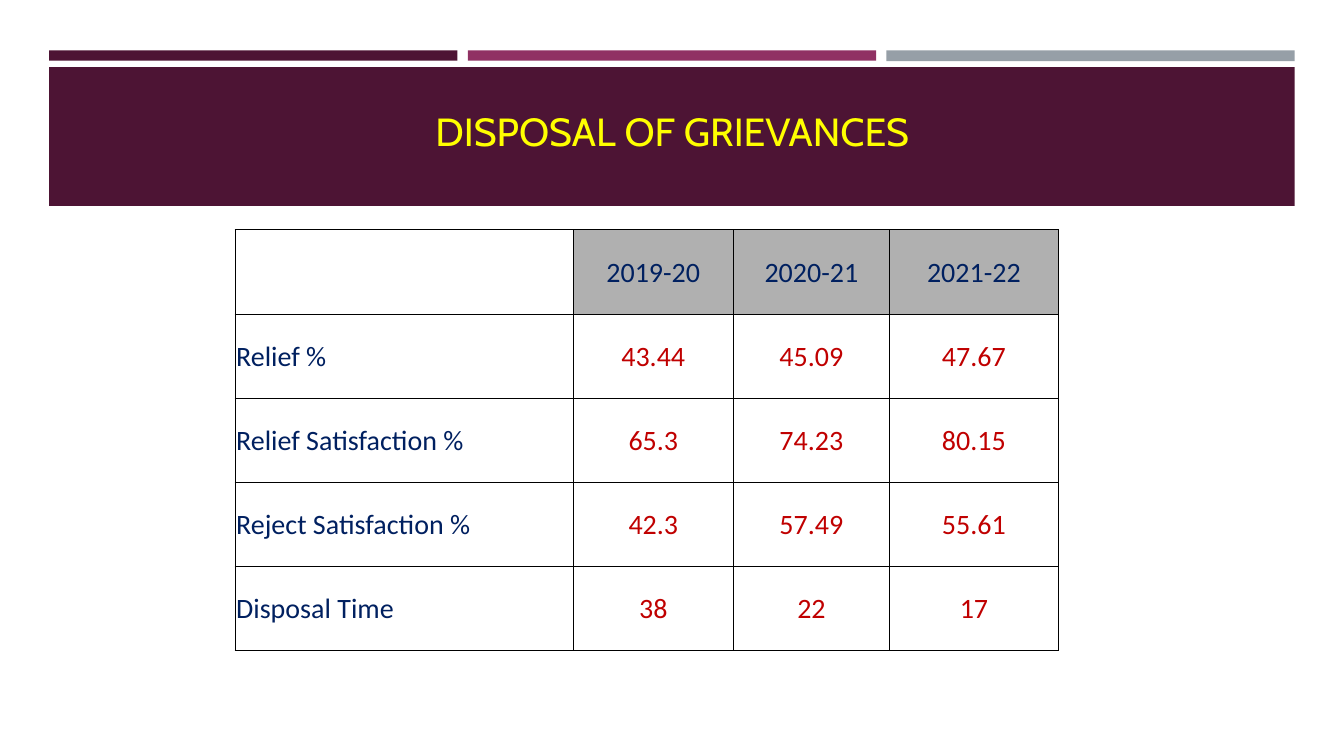
import dataclasses

import lxml.etree
import pptx
import pptx.dml.color
import pptx.enum.shapes
import pptx.enum.text
import pptx.oxml.ns
import pptx.util


@dataclasses.dataclass(frozen=True)
class Theme:
    plum: str = "4D1434"
    magenta: str = "903163"
    slate: str = "969FA7"
    yellow: str = "FFFF00"
    navy: str = "002060"
    red: str = "C00000"
    header: str = "B0B0B0"
    border: str = "000000"
    title_font: str = "Cabin"
    table_font: str = "Calibri"
    title_size: int = 28
    table_size: int = 20
    border_width: float = 0.5


theme = Theme()
Cm = pptx.util.Cm
PP_ALIGN = pptx.enum.text.PP_ALIGN
MSO_ANCHOR = pptx.enum.text.MSO_ANCHOR


def add_text(paragraph, text, font_name, size, color, alignment):
    paragraph.alignment = alignment
    run = paragraph.add_run()
    run.text = text
    run.font.name = font_name
    run.font.size = pptx.util.Pt(size)
    run.font.color.rgb = pptx.dml.color.RGBColor.from_string(color)


def add_borders(cell):
    properties = cell._tc.get_or_add_tcPr()
    for position, side in enumerate(("lnL", "lnR", "lnT", "lnB")):
        line = lxml.etree.Element(pptx.oxml.ns.qn(f"a:{side}"))
        line.set("w", str(pptx.util.Pt(theme.border_width)))
        fill = lxml.etree.SubElement(line, pptx.oxml.ns.qn("a:solidFill"))
        color = lxml.etree.SubElement(fill, pptx.oxml.ns.qn("a:srgbClr"))
        color.set("val", theme.border)
        properties.insert(position, line)


presentation = pptx.Presentation()
presentation.slide_width = Cm(33.87)
presentation.slide_height = Cm(19.05)
slide = presentation.slides.add_slide(presentation.slide_layouts[5])

bands = [
    (1.24, 1.27, 10.29, 0.26, theme.plum),
    (11.79, 1.27, 10.29, 0.26, theme.magenta),
    (22.34, 1.27, 10.29, 0.27, theme.slate),
    (1.24, 1.69, 31.39, 3.5, theme.plum),
]
for left, top, width, height, color in bands:
    band = slide.shapes.add_shape(
        pptx.enum.shapes.MSO_SHAPE.RECTANGLE, Cm(left), Cm(top), Cm(width), Cm(height)
    )
    band.shadow.inherit = False
    band.fill.solid()
    band.fill.fore_color.rgb = pptx.dml.color.RGBColor.from_string(color)
    band.line.fill.background()

title = slide.shapes.title
band.element.addnext(title.element)
title.left, title.top, title.width, title.height = Cm(1.63), Cm(2.51), Cm(30.62), Cm(1.5)
title.text_frame.vertical_anchor = MSO_ANCHOR.BOTTOM
title.text_frame.word_wrap = True
add_text(title.text_frame.paragraphs[0], "DISPOSAL OF GRIEVANCES",
         theme.title_font, theme.title_size, theme.yellow, PP_ALIGN.CENTER)

grievances = [
    ("", "2019-20", "2020-21", "2021-22"),
    ("Relief %", "43.44", "45.09", "47.67"),
    ("Relief Satisfaction %", "65.3", "74.23", "80.15"),
    ("Reject Satisfaction %", "42.3", "57.49", "55.61"),
    ("Disposal Time", "38", "22", "17"),
]
column_widths = [8.53, 4.03, 3.94, 4.25]
row_height = 2.12

table = slide.shapes.add_table(
    len(grievances), len(column_widths), Cm(5.92), Cm(5.79),
    Cm(sum(column_widths)), Cm(row_height * len(grievances))
).table
table.first_row = False
table.horz_banding = False
for column, width in zip(table.columns, column_widths):
    column.width = Cm(width)

for row_index, values in enumerate(grievances):
    table.rows[row_index].height = Cm(row_height)
    for column_index, value in enumerate(values):
        cell = table.cell(row_index, column_index)
        cell.vertical_anchor = MSO_ANCHOR.MIDDLE
        cell.margin_left = cell.margin_right = cell.margin_top = Cm(0.03)
        cell.margin_bottom = 0
        is_heading = row_index == 0 or column_index == 0
        if row_index == 0 and value:
            cell.fill.solid()
            cell.fill.fore_color.rgb = pptx.dml.color.RGBColor.from_string(theme.header)
        else:
            cell.fill.background()
        add_borders(cell)
        if value:
            add_text(cell.text_frame.paragraphs[0], value, theme.table_font, theme.table_size,
                     theme.navy if is_heading else theme.red,
                     PP_ALIGN.LEFT if column_index == 0 else PP_ALIGN.CENTER)

presentation.save("out.pptx")
